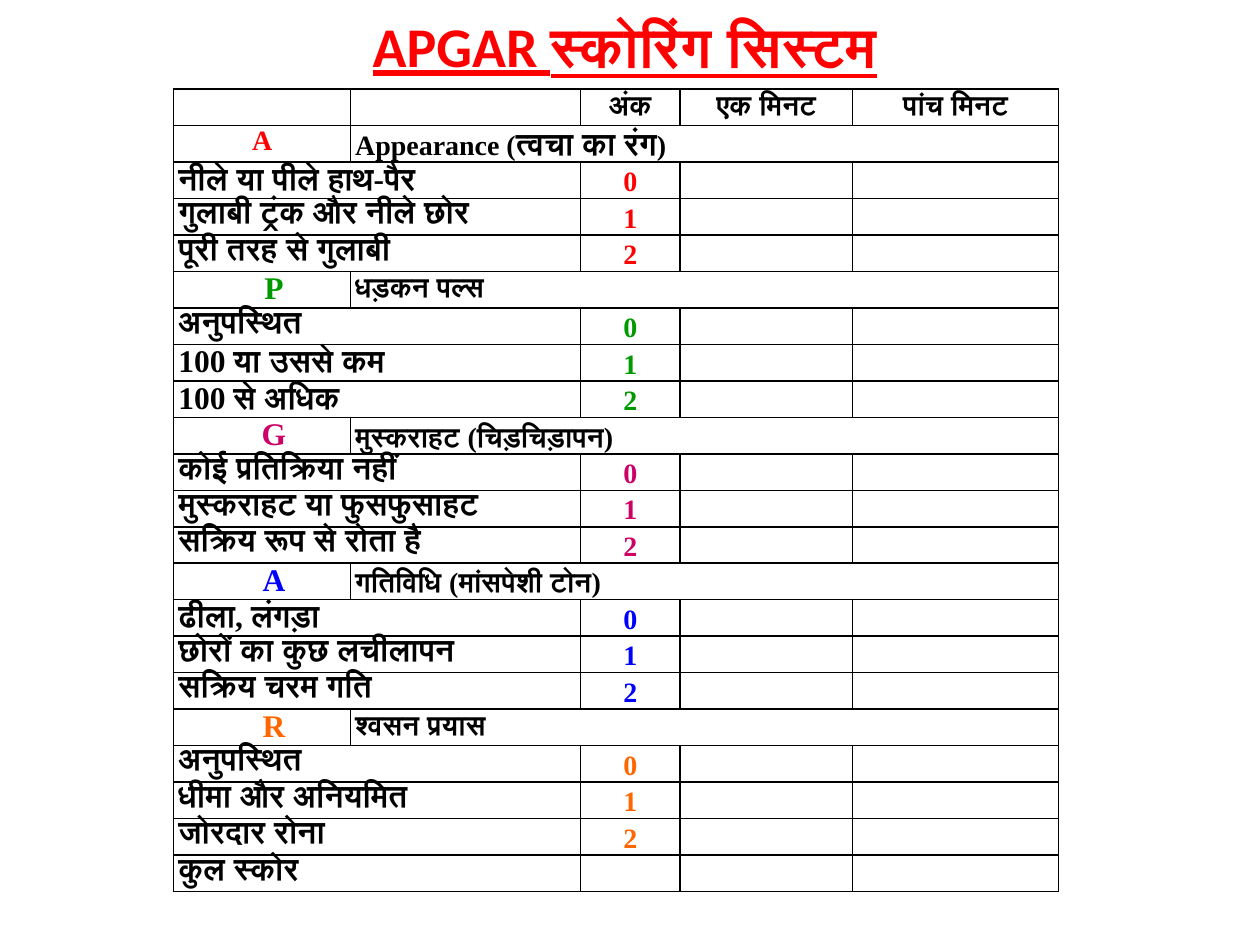
from dataclasses import dataclass

from lxml import etree
from pptx import Presentation
from pptx.dml.color import RGBColor
from pptx.enum import text
from pptx.oxml import ns
from pptx.util import Pt


@dataclass(frozen=True)
class Theme:
    latin: str = "Calibri"
    serif: str = "Times New Roman"
    ink: str = "000000"
    red: str = "FF0000"
    green: str = "009900"
    pink: str = "CC0066"
    blue: str = "0000FF"
    amber: str = "FF6600"
    title: float = 32
    large: float = 18
    small: float = 16
    blank: float = 12
    rule: float = 1
    inset: float = 2.7
    tuck: float = -5
    indent: float = 13.5
    loose: float = 1.15


@dataclass(frozen=True)
class Group:
    letter: str
    name: tuple[str, ...]
    color: str
    signs: tuple[str, ...]
    first: bool = False


T = Theme()
WIDTHS = (101.1, 131.4, 56.9, 98.6, 117.7)
ROW = 20.84
HEADS = ("अंक", "एक मिनट", "पांच मिनट")
TOTAL = "कुल स्कोर"
GROUPS = (
    Group("A", ("Appearance (", "त्वचा का रंग", ")"), T.red,
          ("नीले या पीले हाथ-पैर", "गुलाबी ट्रंक और नीले छोर", "पूरी तरह से गुलाबी"), True),
    Group("P", ("धड़कन पल्स",), T.green,
          ("अनुपस्थित", "100 या उससे कम", "100 से अधिक")),
    Group("G", ("मुस्कराहट (चिड़चिड़ापन)",), T.pink,
          ("कोई प्रतिक्रिया नहीं", "मुस्कराहट या फुसफुसाहट", "सक्रिय रूप से रोता है")),
    Group("A", ("गतिविधि (मांसपेशी टोन)",), T.blue,
          ("ढीला, लंगड़ा", "छोरों का कुछ लचीलापन", "सक्रिय चरम गति")),
    Group("R", ("श्वसन प्रयास",), T.amber,
          ("अनुपस्थित", "धीमा और अनियमित", "जोरदार रोना")),
)


def style(run, size: float, color: str, face: str) -> None:
    font = run.font
    font.name, font.size, font.bold = face, Pt(size), True
    font.color.rgb = RGBColor.from_string(color)


def frame(cell) -> None:
    props = cell._tc.get_or_add_tcPr()
    for side in ("lnL", "lnR", "lnT", "lnB"):
        line = etree.SubElement(props, ns.qn(f"a:{side}"), w=str(Pt(T.rule)))
        fill = etree.SubElement(line, ns.qn("a:solidFill"))
        etree.SubElement(fill, ns.qn("a:srgbClr"), val=T.ink)
    cell.fill.background()
    cell.margin_left = cell.margin_right = Pt(T.inset)
    cell.margin_top, cell.margin_bottom = 0, Pt(T.tuck)
    para = cell.text_frame.paragraphs[0]
    etree.SubElement(para._p, ns.qn("a:endParaRPr"), sz=str(int(T.blank * 100)))


def write(cell, words: str, size: float, color: str = T.ink, face: str = T.serif,
          center: bool = False, loose: bool = False):
    para = cell.text_frame.paragraphs[0]
    para.text = words
    if center:
        para.alignment = text.PP_ALIGN.CENTER
    if loose:
        para.line_spacing = T.loose
    style(para.runs[0], size, color, face)
    return para


def head(grid, row: int, group: Group) -> None:
    size = T.small if group.first else T.large
    para = write(grid.cell(row, 0), group.letter, size, group.color, center=True)
    if not group.first:
        para._p.get_or_add_pPr().set("marL", str(Pt(T.indent)))
    cell = grid.cell(row, 1)
    cell.merge(grid.cell(row, 4))
    para = write(cell, group.name[0], T.small, loose=True)
    for part, size in zip(group.name[1:], (T.large, T.small)):
        run = para.add_run()
        run.text = part
        style(run, size, T.ink, T.serif)


def sign(grid, row: int, words: str, face: str = T.serif) -> None:
    cell = grid.cell(row, 0)
    cell.merge(grid.cell(row, 1))
    write(cell, words, T.large, face=face)


def draw_title(slide) -> None:
    title = slide.shapes.title
    title.left, title.top, title.width, title.height = Pt(166.6), Pt(3), Pt(381), Pt(46)
    box = title.text_frame
    box.text = "APGAR स्कोरिंग सिस्टम"
    box.vertical_anchor = text.MSO_ANCHOR.TOP
    box.auto_size = text.MSO_AUTO_SIZE.SHAPE_TO_FIT_TEXT
    box.paragraphs[0].alignment = text.PP_ALIGN.CENTER
    run = box.paragraphs[0].runs[0]
    style(run, T.title, T.red, T.latin)
    run.font.underline = True


def draw_table(slide) -> None:
    count = 2 + sum(1 + len(group.signs) for group in GROUPS)
    grid = slide.shapes.add_table(count, len(WIDTHS), Pt(99.2), Pt(51),
                                  Pt(sum(WIDTHS)), Pt(ROW * count)).table
    grid.first_row = grid.horz_banding = False
    for col, width in zip(grid.columns, WIDTHS):
        col.width = Pt(width)
    for line in grid.rows:
        line.height = Pt(ROW)
    for cell in grid.iter_cells():
        frame(cell)
    for col, words in enumerate(HEADS, 2):
        write(grid.cell(0, col), words, T.small, face=T.latin, center=True, loose=True)
    row = 1
    for group in GROUPS:
        head(grid, row, group)
        for score, words in enumerate(group.signs):
            row += 1
            sign(grid, row, words)
            write(grid.cell(row, 2), str(score), T.small, group.color,
                  center=True, loose=True)
        row += 1
    sign(grid, row, TOTAL, T.latin)


def main() -> None:
    deck = Presentation()
    deck.slide_width, deck.slide_height = Pt(720), Pt(540)
    slide = deck.slides.add_slide(deck.slide_layouts[5])
    draw_title(slide)
    draw_table(slide)
    deck.save("out.pptx")


if __name__ == "__main__":
    main()
